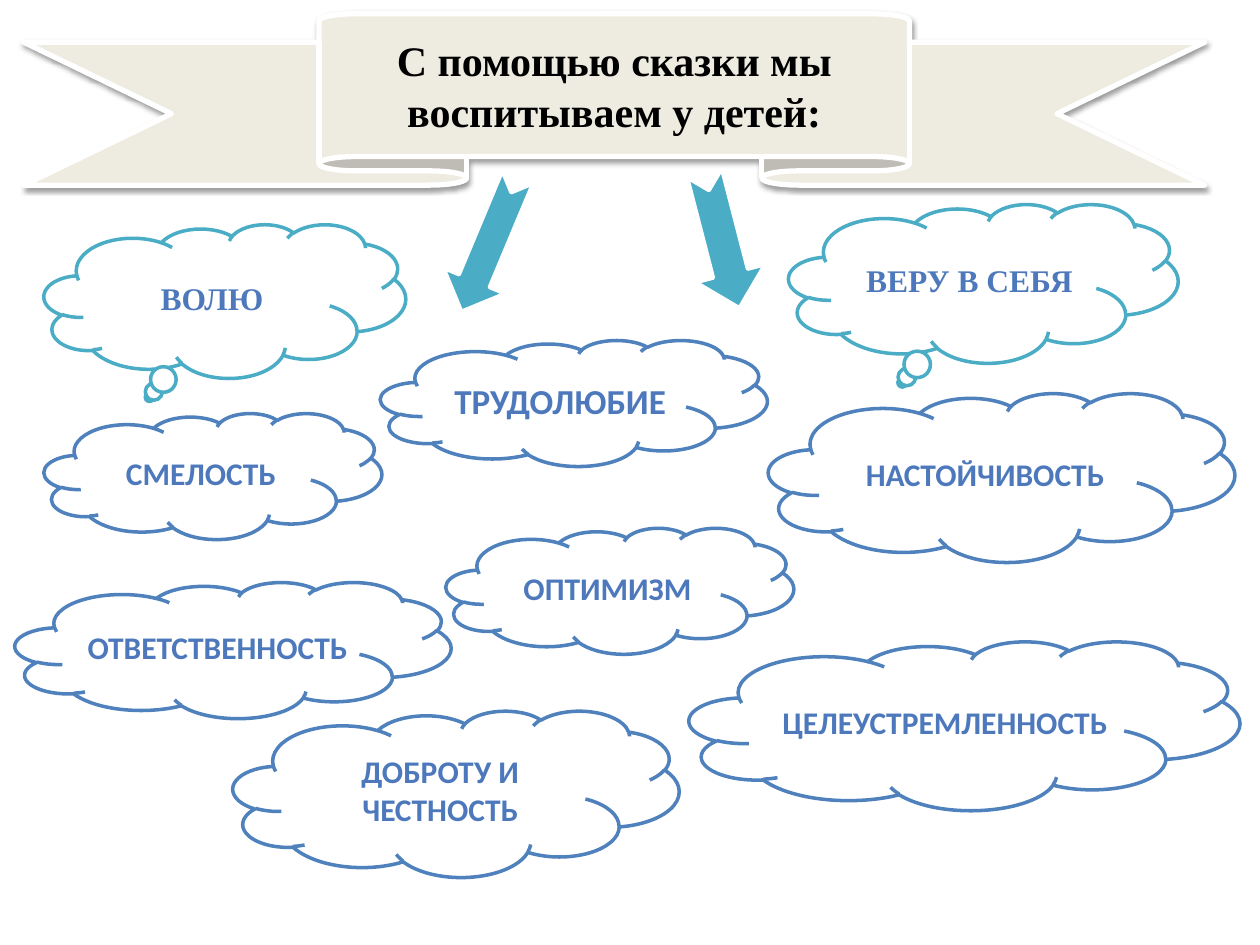
from dataclasses import dataclass

from lxml import etree
from pptx import Presentation, util as u
from pptx.dml.color import RGBColor
from pptx.enum import shapes, text
from pptx.oxml import parse_xml

PX = 9144  # one px is a hundredth of an inch
NS = 'xmlns:a="http://schemas.openxmlformats.org/drawingml/2006/main"'
KIND = shapes.MSO_SHAPE


@dataclass(frozen=True)
class Theme:
    white: str = "FFFFFF"
    black: str = "000000"
    cream: str = "EEECE1"
    teal: str = "4BACC6"
    blue: str = "4F81BD"
    serif: str = "Times New Roman"
    sans: str = "Calibri"
    title: int = 24
    large: int = 20
    body: int = 18
    thin: int = 2
    thick: int = 3
    fade: tuple = ((0, "7494C9"), (49, "4D79BC"), (50, "346AAA"),
                   (92, "325F94"), (100, "315D91"))


THEME = Theme()


@dataclass(frozen=True)
class Box:
    left: int
    top: int
    width: int
    height: int

    def emu(self) -> tuple:
        return tuple(n * PX for n in (self.left, self.top, self.width, self.height))


@dataclass(frozen=True)
class Cloud:
    label: str
    box: Box
    kind: int = KIND.CLOUD
    line: str = THEME.blue
    face: str = THEME.sans
    size: int = THEME.body


@dataclass(frozen=True)
class Arrow:
    box: Box
    turn: float


def thought(label: str, box: Box) -> Cloud:
    return Cloud(label, box, KIND.CLOUD_CALLOUT, THEME.teal, THEME.serif)


RIBBON = Box(19, 11, 937, 136)
PANEL = Box(253, 11, 469, 113)
THOUGHTS = (
    thought("ВОЛЮ", Box(35, 178, 287, 122)),
    thought("ВЕРУ В СЕБЯ", Box(626, 162, 309, 126)),
)
ARROWS = (
    Arrow(Box(331, 168, 115, 52), 112.7),
    Arrow(Box(518, 163, 110, 56), 75.5),
)
CLOUDS = (
    Cloud("НАСТОЙЧИВОСТЬ", Box(610, 312, 370, 134)),
    Cloud("СМЕЛОСТЬ", Box(35, 328, 268, 100)),
    Cloud("ТРУДОЛЮБИЕ", Box(302, 270, 307, 100), size=THEME.large),
    Cloud("ОПТИМИЗМ", Box(354, 419, 276, 100)),
    Cloud("ОТВЕТСТВЕННОСТЬ", Box(12, 462, 346, 108)),
    Cloud("ЦЕЛЕУСТРЕМЛЕННОСТЬ", Box(547, 509, 437, 134)),
    Cloud("ДОБРОТУ И ЧЕСТНОСТЬ", Box(185, 564, 354, 132)),
)


def add_shape(slide, kind: int, box: Box, fill: str, line: str, width: int):
    shape = slide.shapes.add_shape(kind, *box.emu())
    shape.shadow.inherit = False
    shape.fill.solid()
    shape.fill.fore_color.rgb = RGBColor.from_string(fill)
    shape.line.color.rgb = RGBColor.from_string(line)
    shape.line.width = u.Pt(width)
    return shape


def set_text(shape, label: str, face: str, size: int):
    frame = shape.text_frame
    frame.text = label
    frame.word_wrap = True
    frame.auto_size = text.MSO_AUTO_SIZE.NONE
    frame.vertical_anchor = text.MSO_ANCHOR.MIDDLE
    para = frame.paragraphs[0]
    para.alignment = text.PP_ALIGN.CENTER
    run = para.runs[0]
    run.font.name = face
    run.font.size = u.Pt(size)
    run.font.bold = True
    return run


def fade_text(run) -> None:
    """Fill the letters with the vertical theme gradient."""
    stops = "".join(
        f'<a:gs pos="{pos * 1000}"><a:srgbClr val="{color}"/></a:gs>'
        for pos, color in THEME.fade)
    fill = parse_xml(f'<a:gradFill {NS}><a:gsLst>{stops}</a:gsLst>'
                     '<a:lin ang="5400000" scaled="0"/></a:gradFill>')
    run.font._element.insert(0, fill)


def add_cloud(slide, cloud: Cloud) -> None:
    shape = add_shape(slide, cloud.kind, cloud.box, THEME.white, cloud.line, THEME.thin)
    fade_text(set_text(shape, cloud.label, cloud.face, cloud.size))


def add_arrow(slide, arrow: Arrow) -> None:
    shape = add_shape(slide, KIND.NOTCHED_RIGHT_ARROW, arrow.box,
                      THEME.teal, THEME.white, THEME.thin)
    shape.rotation = arrow.turn


def add_title(slide, label: str) -> None:
    """Put the title on the middle panel of a shaded ribbon."""
    ribbon = add_shape(slide, KIND.UP_RIBBON, RIBBON, THEME.cream,
                       THEME.white, THEME.thick)
    glow = ribbon.element.spPr.find("{*}effectLst")
    glow.append(etree.fromstring(
        f'<a:outerShdw {NS} blurRad="{u.Pt(3.1)}" dist="{u.Pt(1.6)}" '
        f'dir="5400000" rotWithShape="0"><a:srgbClr val="{THEME.black}">'
        '<a:alpha val="38000"/></a:srgbClr></a:outerShdw>'))
    title = slide.shapes.title
    title.element.addprevious(ribbon.element)
    title.left, title.top, title.width, title.height = PANEL.emu()
    run = set_text(title, label, THEME.serif, THEME.title)
    run.font.color.rgb = RGBColor.from_string(THEME.black)


def main() -> None:
    deck = Presentation()
    deck.slide_width, deck.slide_height = 1000 * PX, 750 * PX
    slide = deck.slides.add_slide(deck.slide_layouts.get_by_name("Title Only"))
    add_title(slide, "С помощью сказки мы воспитываем у детей:")
    for cloud in THOUGHTS:
        add_cloud(slide, cloud)
    for arrow in ARROWS:
        add_arrow(slide, arrow)
    for cloud in CLOUDS:
        add_cloud(slide, cloud)
    deck.save("out.pptx")


if __name__ == "__main__":
    main()
